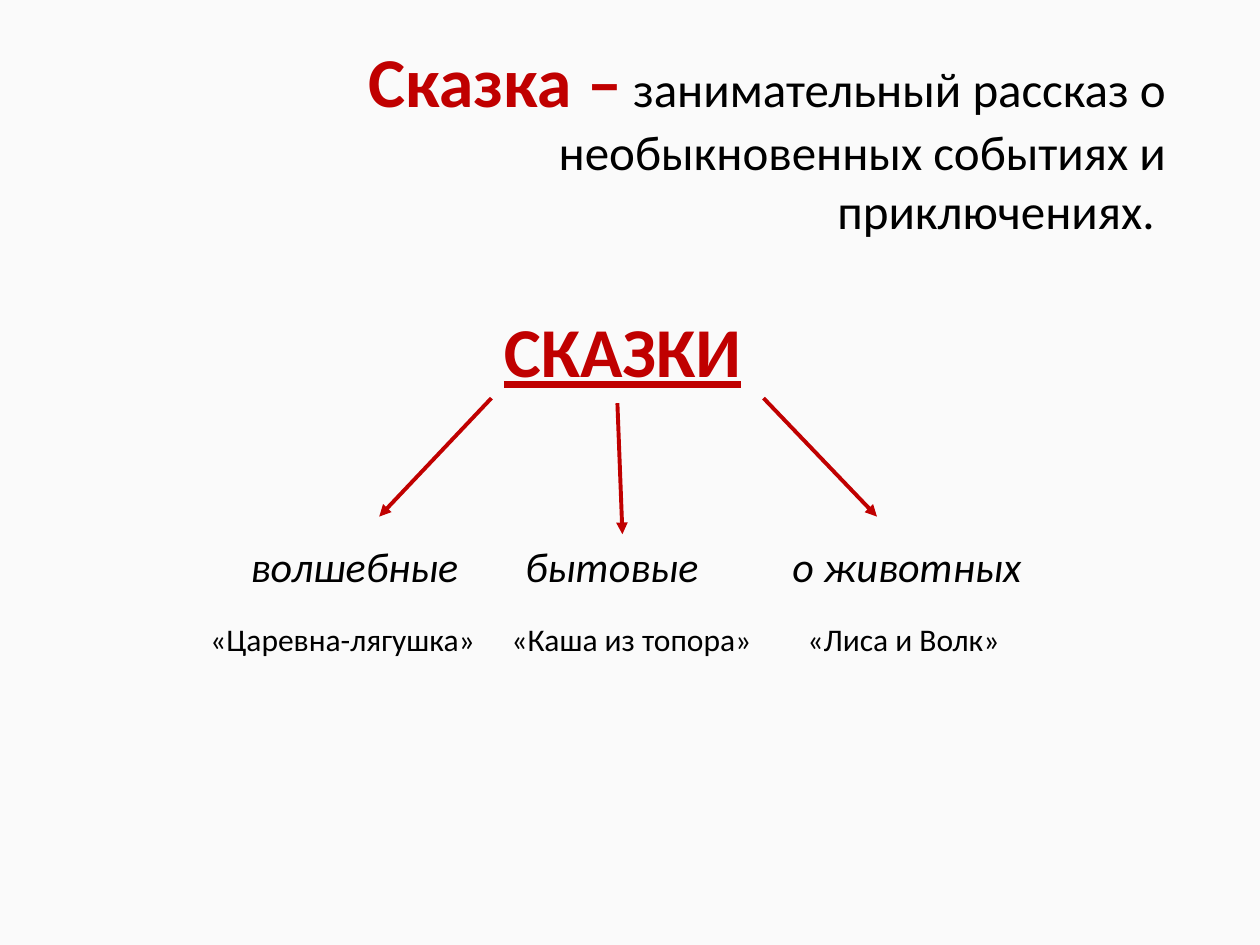
import pptx
import pptx.dml.color
import pptx.enum.shapes
import pptx.enum.text
import pptx.oxml
import pptx.oxml.ns
import pptx.util

RED = pptx.dml.color.RGBColor(0xC0, 0x00, 0x00)
BLACK = pptx.dml.color.RGBColor(0x00, 0x00, 0x00)
PAPER = pptx.dml.color.RGBColor(0xFA, 0xFA, 0xFA)
COLUMNS, ROWS = 100, 75


class FairyTaleSlide:
    font_name = "Calibri"

    def __init__(self, presentation):
        self.cell_width = presentation.slide_width / COLUMNS
        self.cell_height = presentation.slide_height / ROWS
        self.slide = presentation.slides.add_slide(presentation.slide_layouts[6])
        self.slide.background.fill.solid()
        self.slide.background.fill.fore_color.rgb = PAPER

    def across(self, columns):
        return round(columns * self.cell_width)

    def down(self, rows):
        return round(rows * self.cell_height)

    def style(self, font, size, color, **emphasis):
        font.name = self.font_name
        font.size = pptx.util.Pt(size)
        font.color.rgb = color
        for name, value in emphasis.items():
            setattr(font, name, value)

    def text_box(self, left, top, width, height):
        shape = self.slide.shapes.add_textbox(
            self.across(left), self.down(top), self.across(width), self.down(height))
        shape.text_frame.word_wrap = True
        shape.text_frame.auto_size = pptx.enum.text.MSO_AUTO_SIZE.SHAPE_TO_FIT_TEXT
        return shape.text_frame.paragraphs[0]

    def definition(self, place, term, meaning):
        paragraph = self.text_box(*place)
        paragraph.alignment = pptx.enum.text.PP_ALIGN.RIGHT
        for text, size, color, bold in ((term, 40, RED, True), (meaning, 28, BLACK, False)):
            run = paragraph.add_run()
            run.text = text
            self.style(run.font, size, color, bold=bold)

    def heading(self, place, text):
        paragraph = self.text_box(*place)
        paragraph.text = text
        self.style(paragraph.font, 40, RED, bold=True, underline=True)

    def tabbed_row(self, place, labels, stops, size, **emphasis):
        paragraph = self.text_box(*place)
        paragraph.text = "\t".join(labels)
        properties = paragraph._p.get_or_add_pPr()
        tabs = pptx.oxml.ns.qn("a:tabLst")
        tab_list = properties.makeelement(tabs, {})
        properties.append(tab_list)
        for stop in stops:
            tab = tab_list.makeelement(
                pptx.oxml.ns.qn("a:tab"), {"pos": str(self.across(stop)), "algn": "l"})
            tab_list.append(tab)
        self.style(paragraph.font, size, BLACK, **emphasis)

    def arrow(self, start, end):
        connector = self.slide.shapes.add_connector(
            pptx.enum.shapes.MSO_CONNECTOR.STRAIGHT,
            self.across(start[0]), self.down(start[1]),
            self.across(end[0]), self.down(end[1]))
        connector.line.color.rgb = RED
        connector.line.width = pptx.util.Pt(2.25)
        line = connector.line._get_or_add_ln()
        line.append(line.makeelement(pptx.oxml.ns.qn("a:tailEnd"), {"type": "triangle"}))
        properties = connector._element.spPr
        properties.append(properties.makeelement(pptx.oxml.ns.qn("a:effectLst"), {}))


def main():
    presentation = pptx.Presentation()
    presentation.slide_width = pptx.util.Inches(10)
    presentation.slide_height = pptx.util.Inches(7.5)
    page = FairyTaleSlide(presentation)

    page.definition(
        (24.9, 2.5, 68.6, 17.2), "Сказка –",
        " занимательный рассказ о необыкновенных событиях и приключениях. ")
    page.heading((39, 23.9, 26, 7.7), "СКАЗКИ")
    for start, end in (
            ((39, 31.6), (30.1, 41)),
            ((49, 32), (49.4, 42.4)),
            ((60.6, 31.6), (69.6, 41))):
        page.arrow(start, end)
    page.tabbed_row(
        (18.9, 42.4, 66.2, 5), ("волшебные", "бытовые", "о животных"),
        (21.8, 43), 24, italic=True)
    page.tabbed_row(
        (15.7, 48.7, 65.8, 4), ("«Царевна-лягушка»", "«Каша из топора»", "«Лиса и Волк»"),
        (23.9, 47.4), 18)

    presentation.save("out.pptx")


if __name__ == "__main__":
    main()
